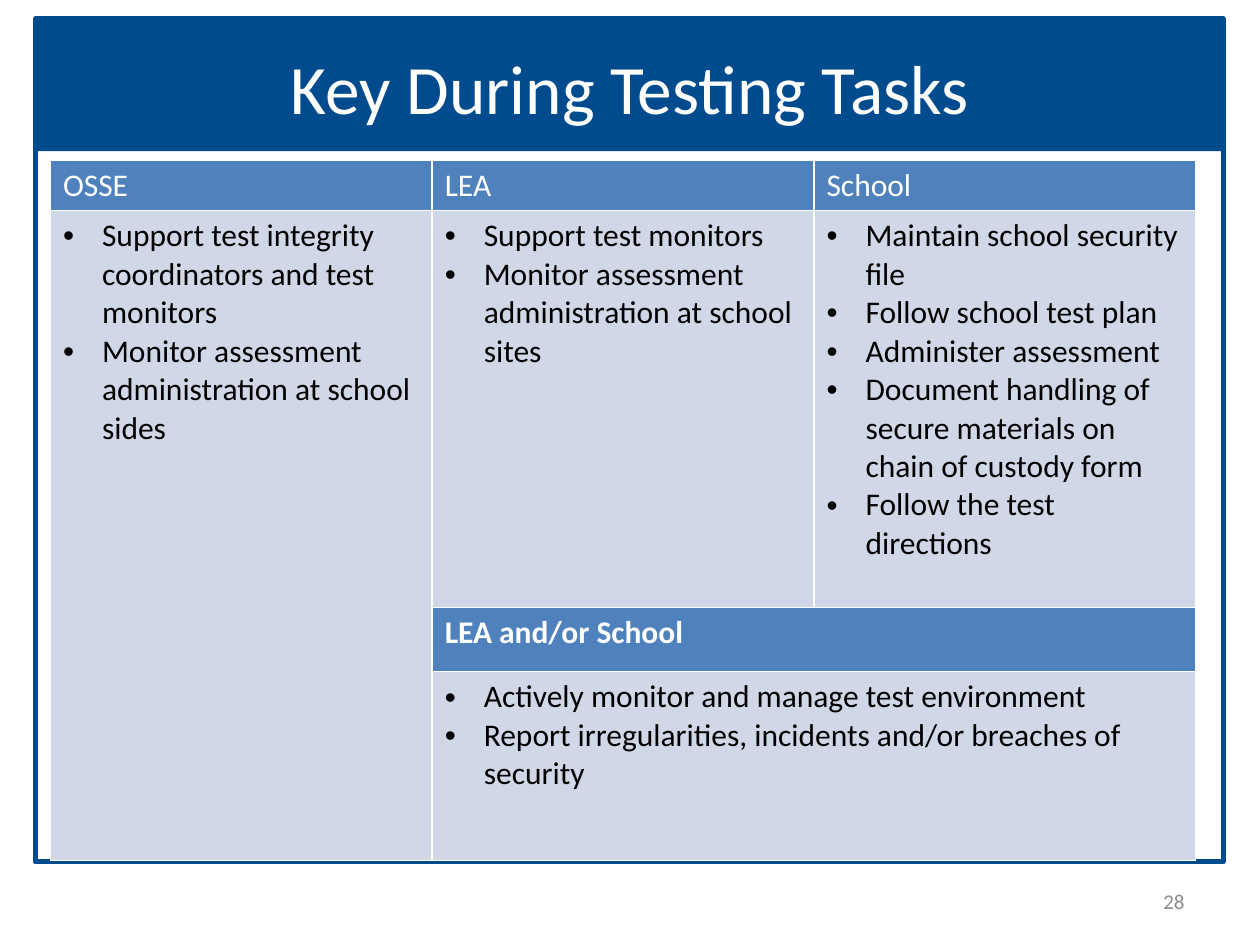
from dataclasses import dataclass
from lxml.etree import SubElement as Sub
from pptx import Presentation as Deck
from pptx.dml.color import RGBColor as Rgb
from pptx.enum.shapes import MSO_SHAPE as Form
from pptx.enum.text import MSO_ANCHOR as Anchor, PP_ALIGN as Align
from pptx.oxml.ns import qn
from pptx.util import Inches, Pt


@dataclass(frozen=True)
class Theme:
    font: str = "Calibri"
    navy: str = "004B8D"
    blue: str = "4F81BD"
    pale: str = "D0D8E8"
    white: str = "FFFFFF"
    black: str = "000000"
    gray: str = "8C8C8C"
    title: float = 39.6
    body: float = 18
    small: float = 12
    frame: float = 3
    rule: float = 1
    indent: float = 0.31


def write(frame, lines, font, size, color, bold=False, align=Align.LEFT,
          anchor=Anchor.TOP, indent=0):
    frame.word_wrap = True
    frame.vertical_anchor = anchor
    for i, line in enumerate(lines):
        para = frame.paragraphs[0] if i == 0 else frame.add_paragraph()
        para.alignment = align
        run = para.add_run()
        run.text = line
        face = run.font
        face.name, face.size, face.bold = font, Pt(size), bold
        face.color.rgb = Rgb.from_string(color)
        if indent:
            props = para._p.get_or_add_pPr()
            props.set("marL", str(Inches(indent)))
            props.set("indent", str(-Inches(indent)))
            Sub(props, qn("a:buFont"), typeface="Arial")
            Sub(props, qn("a:buChar"), char="•")


class Page:
    def __init__(self, slide, theme):
        self.slide, self.theme = slide, theme

    def rect(self, box, fill=None, line=None):
        shape = self.slide.shapes.add_shape(Form.RECTANGLE, *map(Inches, box))
        shape.shadow.inherit = False
        if fill:
            shape.fill.solid()
            shape.fill.fore_color.rgb = Rgb.from_string(fill)
        else:
            shape.fill.background()
        if line:
            shape.line.color.rgb = Rgb.from_string(line)
            shape.line.width = Pt(self.theme.frame)
        else:
            shape.line.fill.background()

    def text(self, box, line, **style):
        shape = self.slide.shapes.add_textbox(*map(Inches, box))
        write(shape.text_frame, [line], self.theme.font, anchor=Anchor.MIDDLE, **style)

    def edge(self, cell):
        props = cell._tc.get_or_add_tcPr()
        for side in ("lnL", "lnR", "lnT", "lnB"):
            line = Sub(props, qn(f"a:{side}"), w=str(Pt(self.theme.rule)))
            fill = Sub(line, qn("a:solidFill"))
            Sub(fill, qn("a:srgbClr"), val=self.theme.white)

    def table(self, spot, wide, highs, count):
        size = wide * count, sum(highs)
        grid = self.slide.shapes.add_table(
            len(highs), count, *map(Inches, (*spot, *size))).table
        for col in grid.columns:
            col.width = Inches(wide)
        for row, high in zip(grid.rows, highs):
            row.height = Inches(high)
        for cell in grid.iter_cells():
            self.edge(cell)
        return grid

    def cell(self, cell, lines, fill, **style):
        cell.fill.solid()
        cell.fill.fore_color.rgb = Rgb.from_string(fill)
        write(cell.text_frame, lines, self.theme.font, self.theme.body, **style)

    def head(self, cell, line, bold=False):
        self.cell(cell, [line], self.theme.blue, color=self.theme.white, bold=bold)

    def list(self, cell, lines):
        self.cell(cell, lines, self.theme.pale, color=self.theme.black,
                  indent=self.theme.indent)


TASKS = {
    "OSSE": ["Support test integrity coordinators and test monitors",
             "Monitor assessment administration at school sides"],
    "LEA": ["Support test monitors",
            "Monitor assessment administration at school sites"],
    "School": ["Maintain school security file",
               "Follow school test plan",
               "Administer assessment",
               "Document handling of secure materials on chain of custody form",
               "Follow the test directions"],
}
SHARED = ["Actively monitor and manage test environment",
          "Report irregularities, incidents and/or breaches of security"]


def main():
    deck = Deck()
    deck.slide_width, deck.slide_height = Inches(10), Inches(7.5)
    theme = Theme()
    page = Page(deck.slides.add_slide(deck.slide_layouts[6]), theme)

    page.rect((0.28, 0.15, 9.43, 1.05), fill=theme.navy)
    page.rect((0.28, 0.15, 9.43, 6.69), line=theme.navy)
    page.text((0.5, 0.3, 9, 0.78), "Key During Testing Tasks",
              size=theme.title, color=theme.white, align=Align.CENTER)
    page.text((7.17, 6.95, 2.33, 0.4), "28",
              size=theme.small, color=theme.gray, align=Align.RIGHT)

    grid = page.table((0.4, 1.27), 3.03, (0.4, 3.15, 0.51, 1.5), len(TASKS))
    grid.cell(1, 0).merge(grid.cell(3, 0))
    for row in (2, 3):
        grid.cell(row, 1).merge(grid.cell(row, 2))
    for col, (name, tasks) in enumerate(TASKS.items()):
        page.head(grid.cell(0, col), name)
        page.list(grid.cell(1, col), tasks)
    page.head(grid.cell(2, 1), "LEA and/or School", bold=True)
    page.list(grid.cell(3, 1), SHARED)

    deck.save("out.pptx")


if __name__ == "__main__":
    main()
